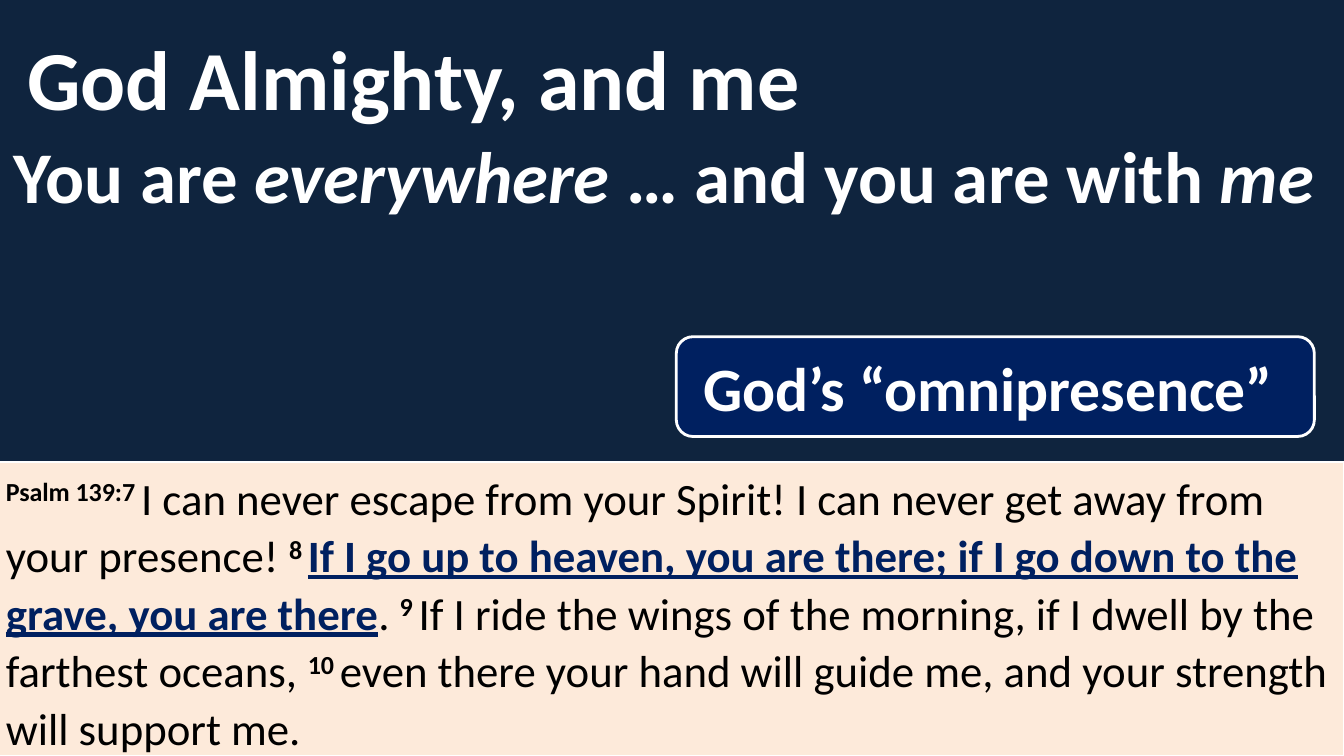
from dataclasses import dataclass

from pptx import Presentation
from pptx.dml.color import RGBColor
from pptx.enum.shapes import MSO_SHAPE
from pptx.enum.text import MSO_ANCHOR, PP_ALIGN
from pptx.util import Pt

NAVY, BLUE, CREAM, WHITE, BLACK = "0F243E", "002060", "FDEADA", "FFFFFF", "000000"


@dataclass
class Run:
    text: str
    color: str = WHITE
    bold: bool = True
    italic: bool = False
    underline: bool = False
    raised: bool = False


@dataclass
class Block:
    box: tuple[float, float, float, float]  # left, top, width, height in points
    size: float
    runs: list[Run]
    anchor: MSO_ANCHOR = MSO_ANCHOR.MIDDLE
    align: PP_ALIGN = PP_ALIGN.LEFT
    spacing: float = 1.0
    preset: MSO_SHAPE | None = None  # None makes a plain text box
    fill: str = ""
    line_width: float = 0


def rgb(color: str) -> RGBColor:
    return RGBColor.from_string(color)


def verse(number: str) -> Run:
    return Run(number + " ", BLACK, raised=True)


def plain(text: str) -> Run:
    return Run(text, BLACK, bold=False)


def draw_block(s, block: Block) -> None:
    box = [Pt(v) for v in block.box]
    if block.preset is None:
        sp = s.shapes.add_textbox(*box)
    else:
        sp = s.shapes.add_shape(block.preset, *box)
        sp.shadow.inherit = False
        sp.fill.solid()
        sp.fill.fore_color.rgb = rgb(block.fill)
        sp.line.color.rgb = rgb(WHITE)
        sp.line.width = Pt(block.line_width)
    tf = sp.text_frame
    tf.word_wrap = True
    tf.vertical_anchor = block.anchor
    p = tf.paragraphs[0]
    p.alignment = block.align
    p.line_spacing = block.spacing
    for run in block.runs:
        add_run(p, run, block.size)


def add_run(p, run: Run, size: float) -> None:
    r = p.add_run()
    r.text = run.text
    r.font.name = "Calibri"
    r.font.size = Pt(size)
    r.font.bold = run.bold
    r.font.italic = run.italic
    r.font.underline = run.underline
    r.font.color.rgb = rgb(run.color)
    if run.raised:
        r.font._element.set("baseline", "30000")


BLOCKS = [
    # Title
    Block((12.24, 10.08, 570.24, 90), 60, [Run("God Almighty, and me")]),
    # Key term
    Block((483.12, 240.48, 455.76, 71.28), 44, [Run("God’s “omnipresence” ")],
          align=PP_ALIGN.CENTER, preset=MSO_SHAPE.ROUNDED_RECTANGLE,
          fill=BLUE, line_width=2),
    # Subtitle
    Block((2.88, 79.92, 956.88, 90), 52, [
        Run("You are "),
        Run("everywhere", italic=True),
        Run(" … and you are with "),
        Run("me", italic=True),
    ]),
    # Bible passage
    Block((-2.88, 329.76, 962.64, 210.24), 32, [
        verse("Psalm 139:7"),
        plain("I can never escape from your Spirit! "
              "I can never get away from your presence! "),
        verse("8"),
        Run("If I go up to heaven, you are there; "
            "if I go down to the grave, you are there", BLUE, underline=True),
        plain(". "),
        verse("9"),
        plain("If I ride the wings of the morning, "
              "if I dwell by the farthest oceans, "),
        verse("10"),
        plain("even there your hand will guide me, "
              "and your strength will support me."),
    ], anchor=MSO_ANCHOR.TOP, spacing=1.07, preset=MSO_SHAPE.RECTANGLE,
          fill=CREAM, line_width=1.5),
]


def main() -> None:
    prs = Presentation()
    prs.slide_width, prs.slide_height = Pt(960), Pt(540)
    s = prs.slides.add_slide(prs.slide_layouts[6])
    s.background.fill.solid()
    s.background.fill.fore_color.rgb = rgb(NAVY)
    for block in BLOCKS:
        draw_block(s, block)
    prs.save("out.pptx")


if __name__ == "__main__":
    main()
